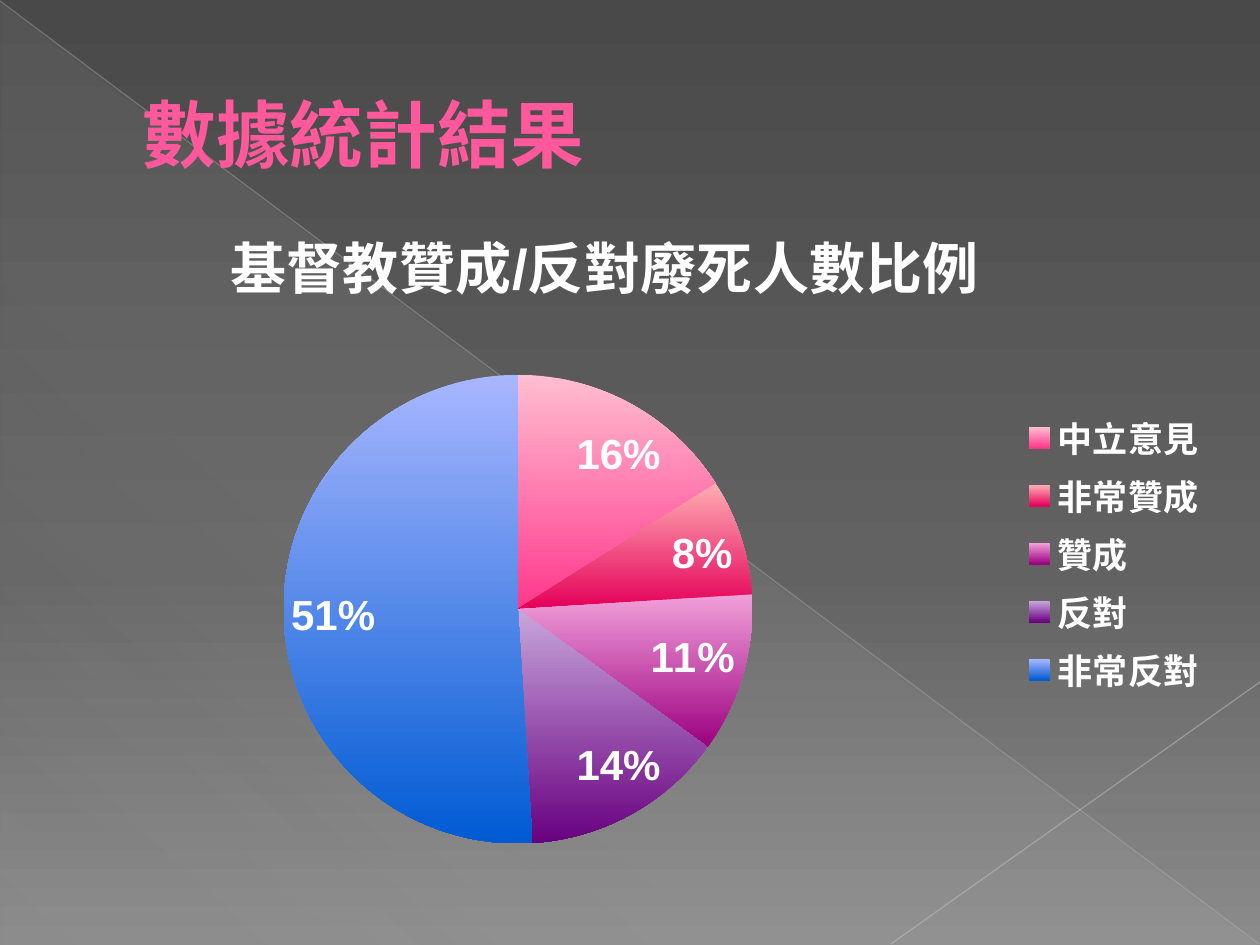
from dataclasses import dataclass

import pptx
import pptx.chart.data
import pptx.dml.color
import pptx.enum.chart
import pptx.enum.shapes
import pptx.enum.text
import pptx.oxml.ns
import pptx.util

qn = pptx.oxml.ns.qn
EMU_PER_PX = 914400 / 126
INSIDE_END = pptx.enum.chart.XL_LABEL_POSITION.INSIDE_END


@dataclass(frozen=True)
class Theme:
    heading_font: str = "TeX Gyre Adventor"
    chart_font: str = "Arial"
    heading: str = "FF599C"
    light: str = "FFFFFF"
    dark: str = "000000"
    heading_size: int = 42
    chart_title_size: int = 32
    label_size: int = 24
    legend_size: int = 20
    chart_size: int = 18


@dataclass(frozen=True)
class Stop:
    position: int
    color: str
    opacity: int = 100


@dataclass(frozen=True)
class Ray:
    start: tuple[int, int]
    end: tuple[int, int]
    color: str
    opacity: int


@dataclass(frozen=True)
class Opinion:
    name: str
    percent: int
    top_color: str
    base_color: str
    label_shift: tuple[int, int] = (0, 0)


@dataclass(frozen=True)
class Box:
    left: int
    top: int
    width: int
    height: int

    def emu(self) -> list[int]:
        return [px(v) for v in (self.left, self.top, self.width, self.height)]


THEME = Theme()
BACKDROP = [Stop(0, "494949"), Stop(60, "626262"), Stop(100, "8B8B8B")]
SHEEN = [Stop(0, "D2D2D2", 10), Stop(70, "D2D2D2", 8), Stop(100, "D2D2D2", 1)]
RAYS = [
    Ray((0, 1), (1259, 944), "BEBEBE", 35),
    Ray((1260, 682), (891, 944), "C5C5C5", 45),
]
OPINIONS = [
    Opinion("中立意見", 16, "FFBED1", "FF388C", (34, 21)),
    Opinion("非常贊成", 8, "FFADB4", "E40059", (-1, -9)),
    Opinion("贊成", 11, "F2A0DA", "9C007F", (-1, 10)),
    Opinion("反對", 14, "C8A6DC", "68007F", (34, -19)),
    Opinion("非常反對", 51, "A8B6FF", "005BD3"),
]
CHART = Box(105, 204, 1116, 694)
PIE = Box(284, 375, 469, 469)
LEGEND = Box(1019, 405, 190, 297)
CHART_TITLE = Box(220, 207, 775, 64)


def px(value: int) -> int:
    return round(value * EMU_PER_PX)


def add_alpha(color, opacity: int) -> None:
    if opacity < 100:
        color.append(color.makeelement(qn("a:alpha"), {"val": str(opacity * 1000)}))


def paint_gradient(fill, stops: list[Stop], angle: int) -> None:
    fill.gradient()
    gradient = fill._xPr.find(qn("a:gradFill"))
    for child in list(gradient):
        gradient.remove(child)
    stop_list = gradient.makeelement(qn("a:gsLst"), {})
    gradient.append(stop_list)
    for stop in stops:
        mark = stop_list.makeelement(qn("a:gs"), {"pos": str(stop.position * 1000)})
        color = mark.makeelement(qn("a:srgbClr"), {"val": stop.color})
        add_alpha(color, stop.opacity)
        mark.append(color)
        stop_list.append(mark)
    direction = {"ang": str(angle * 60000), "scaled": "0"}
    gradient.append(gradient.makeelement(qn("a:lin"), direction))


def style_font(font, name: str, size: int, color: str, bold: bool = True) -> None:
    font.name, font.size, font.bold = name, pptx.util.Pt(size), bold
    font.color.rgb = pptx.dml.color.RGBColor.from_string(color)


def draw_ray(slide, ray: Ray) -> None:
    line = slide.shapes.add_connector(
        pptx.enum.shapes.MSO_CONNECTOR.STRAIGHT,
        *[px(v) for v in ray.start + ray.end],
    )
    line.line.width = pptx.util.Pt(0.75)
    line.line.color.rgb = pptx.dml.color.RGBColor.from_string(ray.color)
    properties = line._element.spPr
    add_alpha(next(properties.iter(qn("a:srgbClr"))), ray.opacity)
    properties.append(properties.makeelement(qn("a:effectLst"), {}))


def set_layout(element, index: int, settings: dict) -> None:
    for old in element.findall(qn("c:layout")):
        element.remove(old)
    layout = element.makeelement(qn("c:layout"), {})
    manual = element.makeelement(qn("c:manualLayout"), {})
    layout.append(manual)
    for tag, value in settings.items():
        manual.append(manual.makeelement(qn(f"c:{tag}"), {"val": str(value)}))
    element.insert(index, layout)


def place_in_chart(element, box: Box, index: int, inner: bool = False) -> None:
    """Fix a chart part at a box given in slide pixels."""
    target = {"layoutTarget": "inner"} if inner else {}
    set_layout(element, index, target | {
        "xMode": "edge",
        "yMode": "edge",
        "x": round((box.left - CHART.left) / CHART.width, 3),
        "y": round((box.top - CHART.top) / CHART.height, 3),
        "w": round(box.width / CHART.width, 3),
        "h": round(box.height / CHART.height, 3),
    })


def shift_label(series, index: int, shift: tuple[int, int]) -> None:
    """Move one percentage away from its default place."""
    label = series.points[index].data_label
    style_font(label.font, THEME.chart_font, THEME.label_size, THEME.light)
    label.position = INSIDE_END
    element = label._dLbl
    element.find(qn("c:showVal")).set("val", "0")
    element.find(qn("c:showPercent")).set("val", "1")
    x, y = shift
    offset = {"x": round(x / CHART.width, 3), "y": round(y / CHART.height, 3)}
    set_layout(element, 1, offset)


def draw_heading(slide) -> None:
    frame = slide.shapes.add_textbox(*Box(63, 37, 1134, 193).emu()).text_frame
    frame.word_wrap = True
    frame.vertical_anchor = pptx.enum.text.MSO_ANCHOR.MIDDLE
    frame.margin_left = frame.margin_right = px(13)
    frame.margin_top = frame.margin_bottom = px(13)
    paragraph = frame.paragraphs[0]
    paragraph._p.get_or_add_pPr().set("marL", str(px(67)))
    run = paragraph.add_run()
    run.text = "數據統計結果"
    style_font(run.font, THEME.heading_font, THEME.heading_size, THEME.heading)


def draw_opinion_pie(slide) -> None:
    data = pptx.chart.data.CategoryChartData()
    data.categories = [opinion.name for opinion in OPINIONS]
    data.add_series("Series 1", [opinion.percent for opinion in OPINIONS])
    chart = slide.shapes.add_chart(
        pptx.enum.chart.XL_CHART_TYPE.PIE, *CHART.emu(), data
    ).chart
    style_font(chart.font, THEME.chart_font, THEME.chart_size, THEME.dark, False)

    # Chart title
    chart.has_title = True
    run = chart.chart_title.text_frame.paragraphs[0].add_run()
    run.text = "基督教贊成/反對廢死人數比例"
    style_font(run.font, THEME.chart_font, THEME.chart_title_size, THEME.light)
    place_in_chart(chart.chart_title._element, CHART_TITLE, 1)

    # Slices and their percentages
    plot = chart.plots[0]
    plot.vary_by_categories = True
    series = plot.series[0]
    labels = series.data_labels
    labels.show_percentage, labels.show_value = True, False
    labels.number_format, labels.number_format_is_linked = "0%", False
    labels.position = INSIDE_END
    style_font(labels.font, THEME.chart_font, THEME.label_size, THEME.light)
    for leader in labels._element.findall(qn("c:showLeaderLines")):
        leader.set("val", "0")
    for index, opinion in enumerate(OPINIONS):
        look = series.points[index].format
        stops = [Stop(0, opinion.top_color), Stop(100, opinion.base_color)]
        paint_gradient(look.fill, stops, 90)
        look.line.fill.background()
        if any(opinion.label_shift):
            shift_label(series, index, opinion.label_shift)
    place_in_chart(next(chart._chartSpace.iter(qn("c:plotArea"))), PIE, 0, True)

    # Legend
    chart.has_legend = True
    chart.legend.position = pptx.enum.chart.XL_LEGEND_POSITION.RIGHT
    chart.legend.include_in_layout = False
    style_font(chart.legend.font, THEME.chart_font, THEME.legend_size, THEME.light)
    place_in_chart(chart.legend._element, LEGEND, 1)


def main() -> None:
    deck = pptx.Presentation()
    deck.slide_width, deck.slide_height = px(1260), px(945)
    slide = deck.slides.add_slide(deck.slide_layouts[6])
    # Backdrop with a sheen and two rays
    paint_gradient(slide.background.fill, BACKDROP, 90)
    sheen = slide.shapes.add_shape(
        pptx.enum.shapes.MSO_SHAPE.RIGHT_TRIANGLE, *Box(1, 3, 1257, 942).emu()
    )
    sheen.shadow.inherit = False
    paint_gradient(sheen.fill, SHEEN, 133)
    sheen.line.fill.background()
    for ray in RAYS:
        draw_ray(slide, ray)
    # Content
    draw_heading(slide)
    draw_opinion_pie(slide)
    deck.save("out.pptx")


if __name__ == "__main__":
    main()
